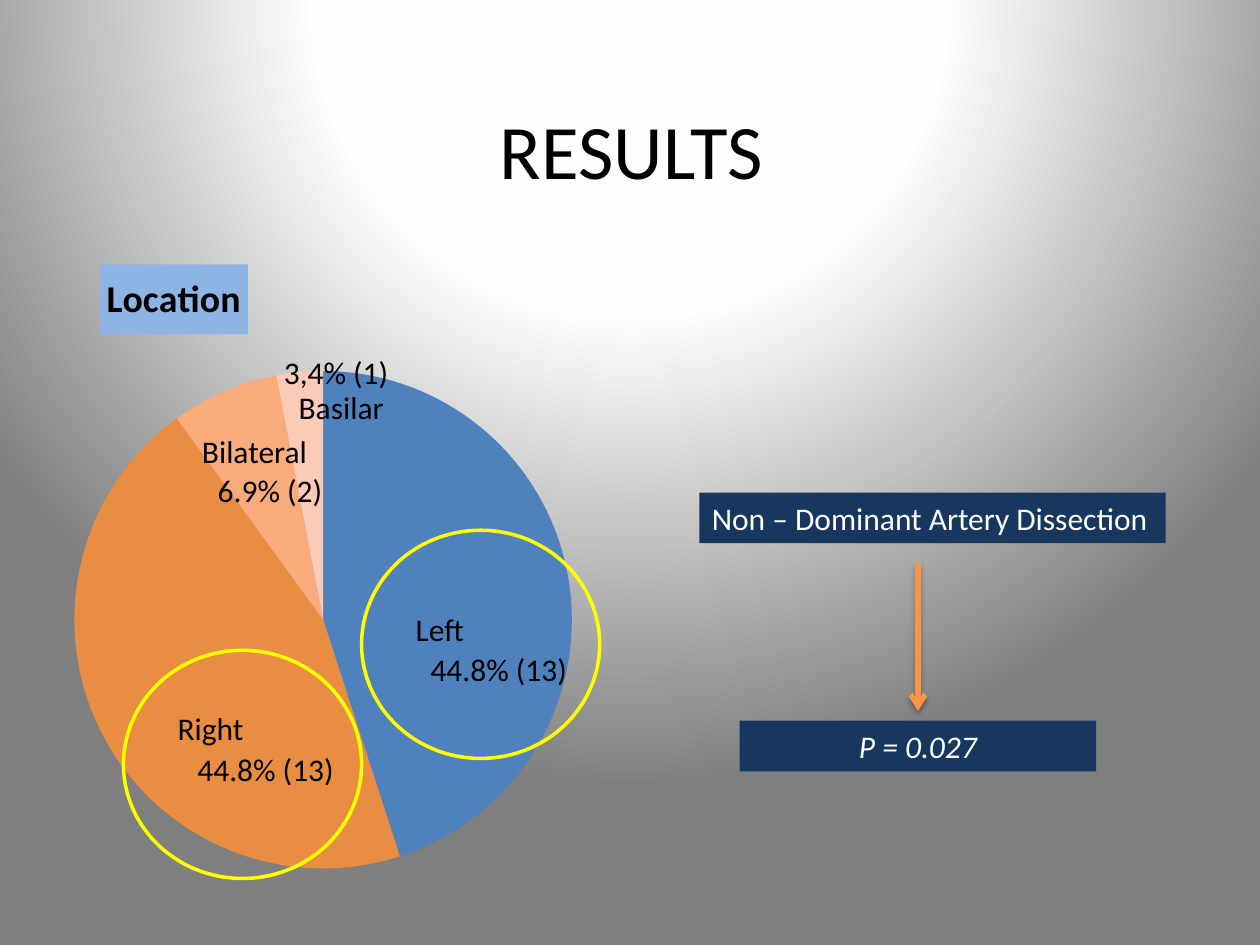
from dataclasses import dataclass

from lxml import etree
from pptx import Presentation
from pptx.chart.data import CategoryChartData
from pptx.dml.color import RGBColor
from pptx.enum.chart import XL_CHART_TYPE
from pptx.enum.shapes import MSO_CONNECTOR, MSO_SHAPE
from pptx.enum.text import MSO_ANCHOR, PP_ALIGN
from pptx.oxml import parse_xml
from pptx.oxml.ns import nsdecls, qn
from pptx.util import Cm, Pt

PIE = XL_CHART_TYPE.PIE
STRAIGHT = MSO_CONNECTOR.STRAIGHT
RECT, OVAL = MSO_SHAPE.RECTANGLE, MSO_SHAPE.OVAL
LEFT, CENTER = PP_ALIGN.LEFT, PP_ALIGN.CENTER
MIDDLE = MSO_ANCHOR.MIDDLE


@dataclass(frozen=True)
class Theme:
    font: str = "Calibri"
    title: float = 44
    heading: float = 21.6
    body: float = 18
    black: str = "000000"
    white: str = "FFFFFF"
    navy: str = "17375E"
    sky: str = "8EB4E3"
    arrow: str = "F79646"
    ring: str = "FFFF00"
    slices: tuple = ("4F81BD", "E88D42", "F9AB7C", "FBCBB8")
    backdrop: tuple = ((0, "FFFFFF"), (40, "FEFEFE"), (100, "7F7F7F"))


T = Theme()
ROW = 1.02


def rgb(value):
    return RGBColor.from_string(value)


def style_font(font, size, color, bold=False, italic=False):
    font.name, font.size = T.font, Pt(size)
    font.bold, font.italic = bold, italic
    font.color.rgb = rgb(color)


def write(sp, text, size=T.body, color=T.black, align=LEFT, wrap=True, italic=False):
    tf = sp.text_frame
    tf.word_wrap = wrap
    p = tf.paragraphs[0]
    p.alignment = align
    r = p.add_run()
    r.text = text
    style_font(r.font, size, color, italic=italic)


def add_label(s, x, y, w, text, **style):
    write(s.shapes.add_textbox(Cm(x), Cm(y), Cm(w), Cm(ROW)), text, **style)


def set_background(s):
    """Radial gradient centred above the slide."""
    s.background.fill.solid()
    stops = "".join(
        f'<a:gs pos="{pos * 1000}"><a:srgbClr val="{color}"/></a:gs>'
        for pos, color in T.backdrop)
    bg = s.element.find(".//" + qn("p:bgPr"))
    bg.replace(bg[0], parse_xml(
        f'<a:gradFill {nsdecls("a")} rotWithShape="1"><a:gsLst>{stops}</a:gsLst>'
        '<a:path path="circle"><a:fillToRect l="50000" t="-80000" r="50000" b="180000"/>'
        '</a:path></a:gradFill>'))


def add_title(s, x, y, w, h):
    sp = s.shapes.add_textbox(Cm(x), Cm(y), Cm(w), Cm(h))
    sp.text_frame.vertical_anchor = MIDDLE
    write(sp, "RESULTS", size=T.title, align=CENTER)


def set_layout(parent, after, **values):
    """Place a chart part by fractions of the chart area."""
    for old in parent.findall(qn("c:layout")):
        parent.remove(old)
    layout = etree.Element(qn("c:layout"))
    manual = etree.SubElement(layout, qn("c:manualLayout"))
    for tag, value in values.items():
        etree.SubElement(manual, qn("c:" + tag)).set("val", str(value))
    if after is None:
        parent.insert(0, layout)
    else:
        after.addnext(layout)


def add_location_pie(s, x, y, w, h):
    data = CategoryChartData()
    data.categories = ["1", "2", "3", "4"]
    data.add_series("Series 1", (45, 45, 7, 3))
    chart = s.shapes.add_chart(PIE, Cm(x), Cm(y), Cm(w), Cm(h), data).chart
    style_font(chart.font, T.body, T.black)
    chart.has_legend = False
    chart.has_title = True
    title = chart.chart_title
    r = title.text_frame.paragraphs[0].add_run()
    r.text = "Location"
    style_font(r.font, T.heading, T.black, bold=True)
    title.format.fill.solid()
    title.format.fill.fore_color.rgb = rgb(T.sky)
    title_xml = title.format.element if hasattr(title.format, "element") else \
        chart.element.find(".//" + qn("c:title"))
    set_layout(title_xml, title_xml.find(qn("c:tx")),
               xMode="edge", yMode="edge", x=0.23, y=0)
    set_layout(chart.element.find(".//" + qn("c:plotArea")), None,
               layoutTarget="inner", xMode="edge", yMode="edge",
               x=0.2, y=0.17, w=0.59, h=0.8)
    plot = chart.plots[0]
    plot.vary_by_categories = True
    for i, color in enumerate(T.slices):
        fill = plot.series[0].points[i].format.fill
        fill.solid()
        fill.fore_color.rgb = rgb(color)

    names = (("Left", 10.03, 6.84, LEFT), ("Right", 5.23, 8.84, LEFT),
             ("Bilateral", 5.23, 3.26, CENTER), ("Basilar", 7.67, 2.37, LEFT))
    for text, dx, dy, align in names:
        add_label(s, x + dx, y + dy, 3.6, text, align=align)
    shares = (("44.8% (13)", 10.33, 7.65, 3.3), ("44.8% (13)", 5.63, 9.66, 3.3),
              ("6.9% (2)", 6.04, 4.04, 2.64), (" 3,4% (1)", 7.23, 1.66, 2.8))
    for text, dx, dy, width in shares:
        add_label(s, x + dx, y + dy, width, text, wrap=False)
    for dx, dy in ((4.39, 7.78), (9.19, 5.36)):
        add_ring(s, x + dx, y + dy, 4.8, 4.6)


def add_ring(s, x, y, w, h):
    sp = s.shapes.add_shape(OVAL, Cm(x), Cm(y), Cm(w), Cm(h))
    sp.shadow.inherit = False
    sp.fill.background()
    sp.line.color.rgb = rgb(T.ring)
    sp.line.width = Pt(2)


def add_bar(s, x, y, w, text, **style):
    sp = s.shapes.add_shape(RECT, Cm(x), Cm(y), Cm(w), Cm(ROW))
    sp.shadow.inherit = False
    sp.fill.solid()
    sp.fill.fore_color.rgb = rgb(T.navy)
    sp.line.fill.background()
    write(sp, text, color=T.white, **style)


def add_arrow(s, x, top, bottom):
    line = s.shapes.add_connector(STRAIGHT, Cm(x), Cm(top), Cm(x), Cm(bottom))
    line.line.color.rgb = rgb(T.arrow)
    line.line.width = Pt(3)
    ln = line.line._get_or_add_ln()
    etree.SubElement(ln, qn("a:tailEnd")).set("type", "arrow")
    ln.addnext(parse_xml(
        f'<a:effectLst {nsdecls("a")}><a:outerShdw blurRad="40000" dist="23000" '
        f'dir="5400000" rotWithShape="0"><a:srgbClr val="{T.black}">'
        '<a:alpha val="35000"/></a:srgbClr></a:outerShdw></a:effectLst>'))


def add_finding(s, x, y, w, h):
    """A statement bar, an arrow and the p value below it."""
    p_left, p_width, gap = x + 0.81, 7.19, 0.4
    p_top = y + h - ROW
    add_arrow(s, p_left + p_width / 2, y + ROW + gap, p_top - gap / 2)
    add_bar(s, p_left, p_top, p_width, "P = 0.027", align=CENTER, italic=True)
    add_bar(s, x, y, w, "Non – Dominant Artery Dissection")


def main():
    prs = Presentation()
    prs.slide_width, prs.slide_height = Cm(25.4), Cm(19.05)
    s = prs.slides.add_slide(prs.slide_layouts[6])
    set_background(s)
    add_title(s, 1.3, 1.52, 22.86, 2.97)
    add_location_pie(s, -1.9, 5.33, 17, 12.57)
    add_finding(s, 14.1, 9.93, 9.4, 5.62)
    prs.save("out.pptx")


if __name__ == "__main__":
    main()
